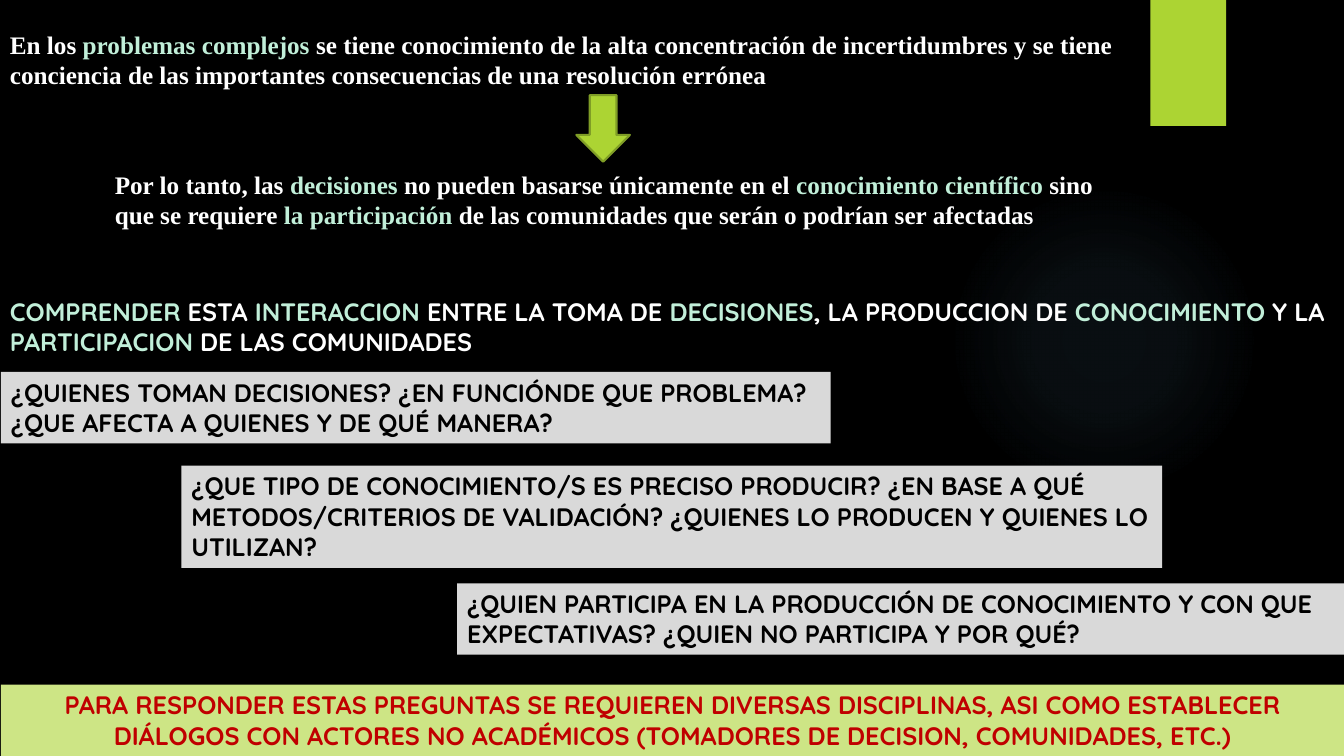
"""Builds a slide on complex problems, decisions and community participation."""
from lxml import etree
from pptx import Presentation
from pptx.dml.color import RGBColor
from pptx.enum.shapes import MSO_SHAPE as Shape
from pptx.enum.text import MSO_ANCHOR as Anchor, MSO_AUTO_SIZE as Fit, PP_ALIGN as Align
from pptx.oxml.ns import nsdecls
from pptx.util import Pt

BLACK = RGBColor(0x00, 0x00, 0x00)
WHITE = RGBColor(0xFF, 0xFF, 0xFF)
MINT = RGBColor(0xC1, 0xEF, 0xD9)
GREY = RGBColor(0xD9, 0xD9, 0xD9)
LIME = RGBColor(0xAC, 0xD4, 0x33)
OLIVE = RGBColor(0x7F, 0x9D, 0x26)
PALE = RGBColor(0xCD, 0xE5, 0x85)
RED = RGBColor(0xC0, 0x00, 0x00)
SKY = RGBColor(0x7A, 0xC4, 0xF0)

SERIF, SANS = "Times New Roman", "Quicksand"
WIDE, TALL = 960, 540
ROW, LINE = 51, 22

# Words between asterisks take the accent colour.
CLAIMS = [
    ((0, 17.3, 823.7), SERIF,
     "En los *problemas complejos *se tiene conocimiento de la alta concentración de "
     "incertidumbres y se tiene conciencia de las importantes consecuencias de una "
     "resolución errónea"),
    ((74.9, 117.4, 733), SERIF,
     "Por lo tanto, las *decisiones *no pueden basarse únicamente en el *conocimiento "
     "científico *sino que se requiere *la participación *de las comunidades que serán o "
     "podrían ser afectadas"),
    ((0, 208, WIDE), SANS,
     "*COMPRENDER* ESTA *INTERACCION* ENTRE LA TOMA DE *DECISIONES*, LA PRODUCCION DE "
     "*CONOCIMIENTO* Y LA *PARTICIPACION* DE LAS COMUNIDADES"),
]
ASKS = [
    ((0.7, 265.7, 592.6), 2,
     "¿QUIENES TOMAN DECISIONES? ¿EN FUNCIÓNDE QUE PROBLEMA? ¿QUE AFECTA A QUIENES Y DE "
     "QUÉ MANERA?"),
    ((129.6, 332.6, 700.6), 3,
     "¿QUE TIPO DE CONOCIMIENTO/S ES PRECISO PRODUCIR? ¿EN BASE A QUÉ METODOS/CRITERIOS "
     "DE VALIDACIÓN? ¿QUIENES LO PRODUCEN Y QUIENES LO UTILIZAN?"),
    ((326.6, 416.7, 633.4), 2,
     "¿QUIEN PARTICIPA EN LA PRODUCCIÓN DE CONOCIMIENTO Y CON QUE EXPECTATIVAS? ¿QUIEN NO "
     "PARTICIPA Y POR QUÉ?"),
]
CLOSE = ("PARA RESPONDER ESTAS PREGUNTAS SE REQUIEREN DIVERSAS DISCIPLINAS, ASI COMO "
         "ESTABLECER DIÁLOGOS CON ACTORES NO ACADÉMICOS (TOMADORES DE DECISION, "
         "COMUNIDADES, ETC.)")
GLOW = [(0, 7), (36, 6), (69, 0), (100, 0)]

deck = Presentation()
deck.slide_width, deck.slide_height = Pt(WIDE), Pt(TALL)
slide = deck.slides.add_slide(deck.slide_layouts[6])
slide.background.fill.solid()
slide.background.fill.fore_color.rgb = BLACK


def draw(kind, x, y, w, h, fill=None, line=None):
    """Adds a preset shape without shadow."""
    shape = slide.shapes.add_shape(kind, Pt(x), Pt(y), Pt(w), Pt(h))
    shape.shadow.inherit = False
    if fill is not None:
        shape.fill.solid()
        shape.fill.fore_color.rgb = fill
    if line is None:
        shape.line.fill.background()
    else:
        shape.line.color.rgb = line
        shape.line.width = Pt(1.5)
    return shape


def write(text, x, y, w, h=ROW, face=SANS, color=WHITE, fill=None, align=Align.LEFT):
    """Adds a box of bold text, plain or on a filled panel."""
    if fill is None:
        box = slide.shapes.add_textbox(Pt(x), Pt(y), Pt(w), Pt(h))
    else:
        box = draw(Shape.RECTANGLE, x, y, w, h, fill)
    frame = box.text_frame
    frame.word_wrap = True
    frame.auto_size = Fit.SHAPE_TO_FIT_TEXT
    frame.vertical_anchor = Anchor.TOP
    para = frame.paragraphs[0]
    para.alignment = align
    for i, part in enumerate(text.split("*")):
        if part:
            run = para.add_run()
            run.text = part
            run.font.name, run.font.size, run.font.bold = face, Pt(18), True
            run.font.color.rgb = MINT if i % 2 else color


halo = draw(Shape.OVAL, 677.5, 131.8, 221.8, 221.8)
stops = "".join(f'<a:gs pos="{at * 1000}"><a:srgbClr val="{SKY}">'
                f'<a:alpha val="{part * 1000}"/></a:srgbClr></a:gs>' for at, part in GLOW)
halo.element.spPr.insert(2, etree.fromstring(
    f'<a:gradFill {nsdecls("a")}><a:gsLst>{stops}</a:gsLst><a:path path="circle">'
    '<a:fillToRect l="50000" t="50000" r="50000" b="50000"/></a:path></a:gradFill>'))
draw(Shape.RECTANGLE, 821.8, 0, 54, 90, LIME)

for place, face, text in CLAIMS:
    write(text, *place, face=face)
draw(Shape.DOWN_ARROW, 411.7, 68, 38.2, 47.5, LIME, OLIVE)
for place, rows, text in ASKS:
    write(text, *place, h=ROW + (rows - 2) * LINE, color=BLACK, fill=GREY)
write(CLOSE, 0.7, TALL - ROW, WIDE - 0.7, color=RED, fill=PALE, align=Align.CENTER)

deck.save("out.pptx")
